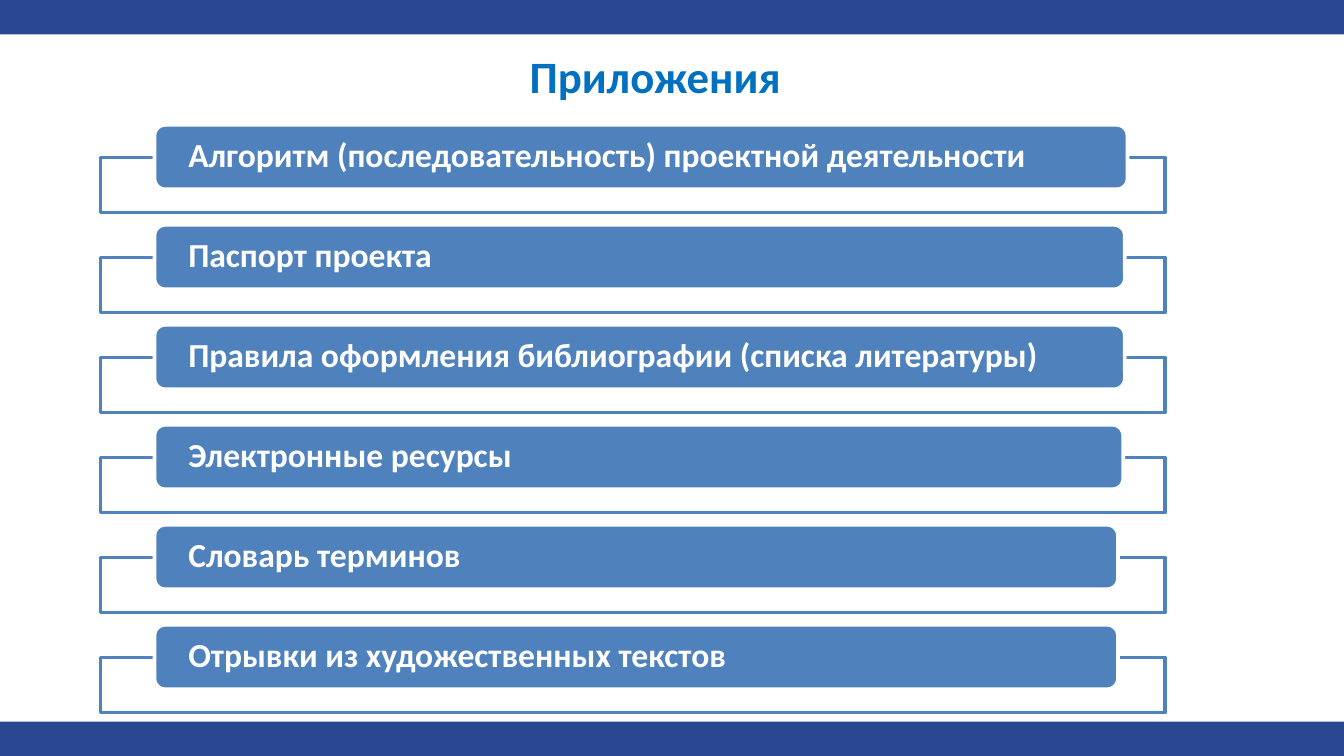
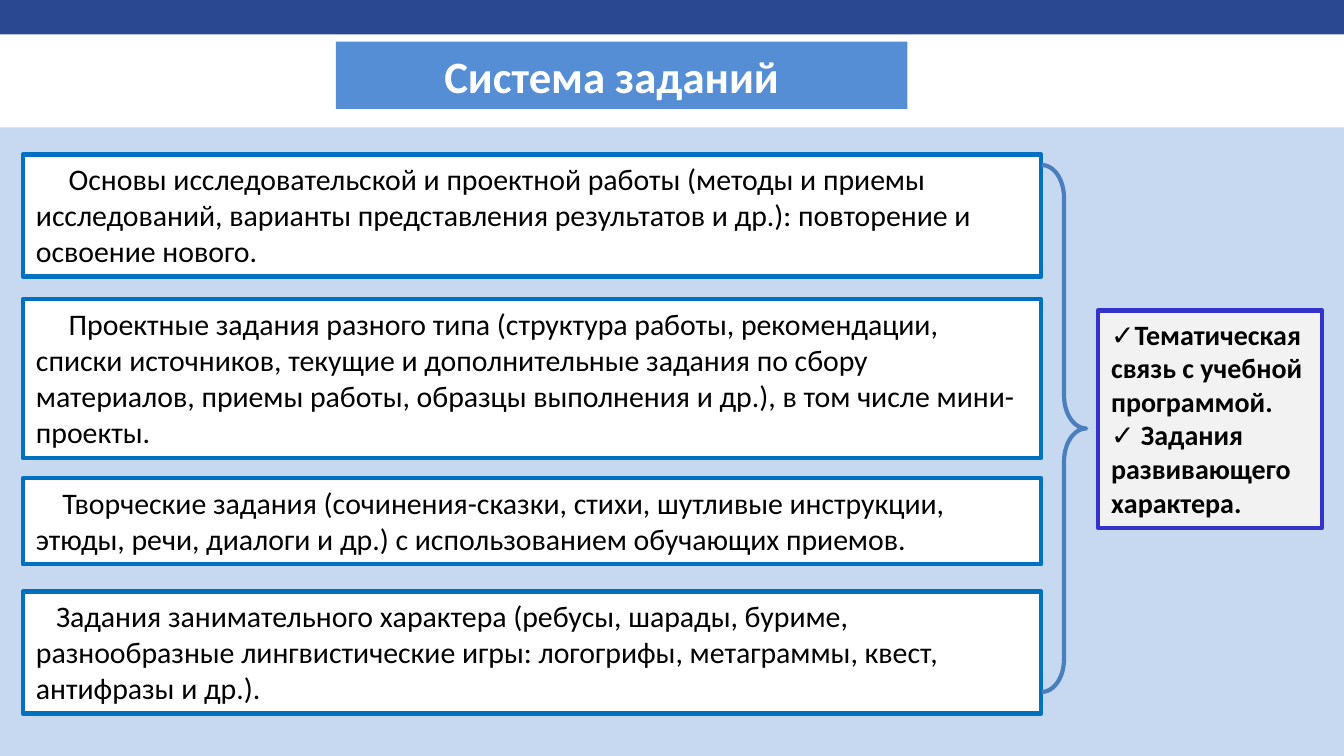
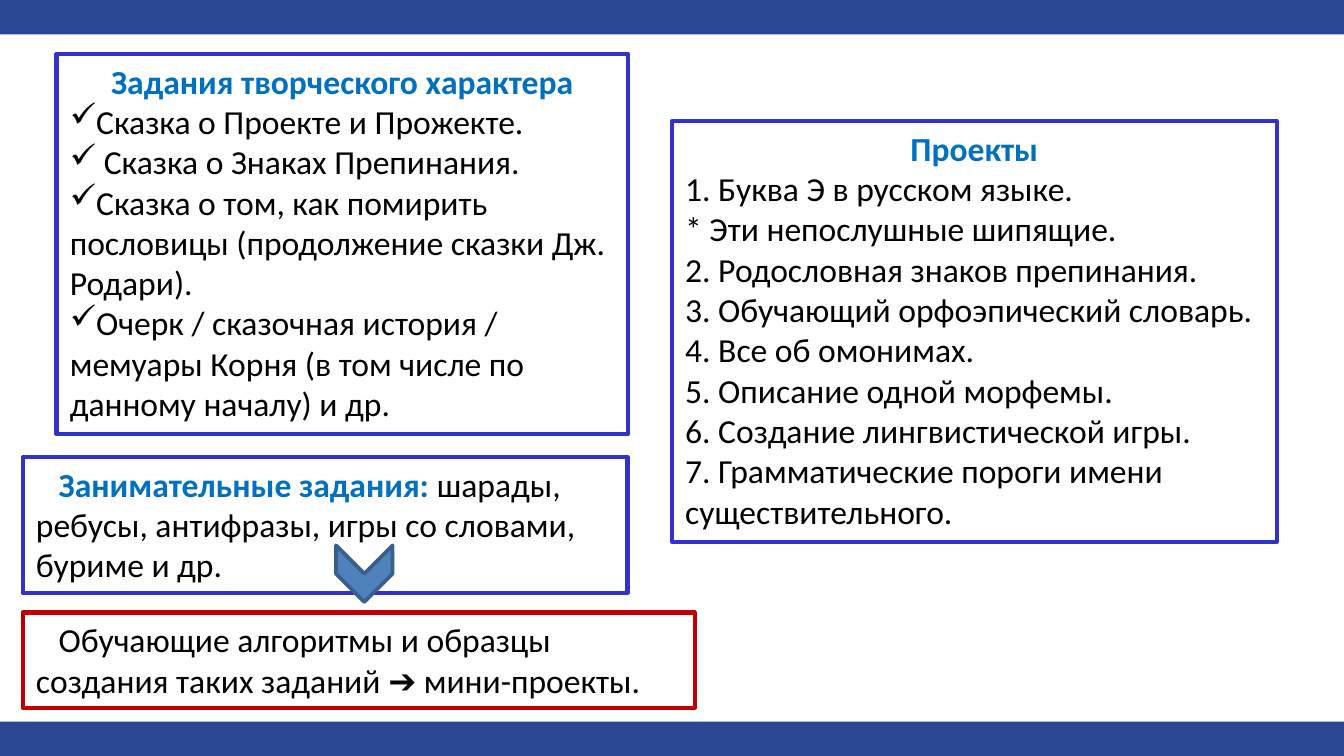
from dataclasses import dataclass, field
from typing import Any, Optional

from lxml import etree
from pptx import Presentation
from pptx import util as u
from pptx.dml.color import RGBColor
from pptx.enum import shapes, text
from pptx.oxml.ns import qn

KIND = shapes.MSO_SHAPE
ALIGN = text.PP_ALIGN
ANCHOR = text.MSO_ANCHOR


@dataclass(frozen=True)
class Theme:
    font: str = "Calibri"
    band: str = "294891"
    accent: str = "0070C0"
    bar: str = "4F81BD"
    brace: str = "4B7EBC"
    chevron_edge: str = "3A5F8C"
    banner: str = "558ED5"
    panel: str = "C6D9F1"
    note: str = "F2F2F2"
    frame: str = "3333CC"
    result: str = "C00000"
    ink: str = "000000"
    white: str = "FFFFFF"
    title: float = 24
    body: float = 18
    card: float = 16
    side: float = 15
    thin: float = 2
    thick: float = 2.25


T = Theme()


@dataclass(frozen=True)
class Area:
    left: float
    top: float
    width: float
    height: float

    def cm(self) -> list[u.Cm]:
        return [u.Cm(v) for v in (self.left, self.top, self.width, self.height)]


@dataclass(frozen=True)
class Span:
    words: str
    color: str = T.ink
    bold: bool = False


@dataclass(frozen=True)
class Para:
    spans: tuple[Span, ...]
    align: Any = ALIGN.LEFT
    indent: float = 0
    bullet: str = ""
    spacing: Optional[float] = None


@dataclass(frozen=True)
class Box:
    area: Area
    fill: Optional[str] = None
    line: Optional[str] = None
    weight: float = T.thick
    kind: Any = KIND.RECTANGLE
    paras: tuple[Para, ...] = ()
    size: float = T.body
    frame: dict[str, Any] = field(default_factory=dict)


@dataclass(frozen=True)
class Bar:
    words: str
    width: float


@dataclass(frozen=True)
class Card:
    top: float
    height: float
    indent: float
    words: str


BARS = (
    Bar("Алгоритм (последовательность) проектной деятельности", 18.39),
    Bar("Паспорт проекта", 18.34),
    Bar("Правила оформления библиографии (списка литературы)", 18.34),
    Bar("Электронные ресурсы", 18.31),
    Bar("Словарь терминов", 18.21),
    Bar("Отрывки из художественных текстов", 18.21),
)
BAR_PITCH = 1.89

CARDS = (
    Card(2.92, 2.31, 0.62,
         "Основы исследовательской и проектной работы (методы и приемы исследований, "
         "варианты представления результатов и др.): повторение и освоение нового."),
    Card(5.66, 3.0, 0.62,
         "Проектные задания разного типа (структура работы, рекомендации, списки "
         "источников, текущие и дополнительные задания по сбору материалов, приемы "
         "работы, образцы выполнения и др.), в том числе мини-проекты."),
    Card(9.04, 1.63, 0.5,
         "Творческие задания (сочинения-сказки, стихи, шутливые инструкции, этюды, "
         "речи, диалоги и др.) с использованием обучающих приемов."),
    Card(11.18, 2.31, 0.38,
         "Задания занимательного характера (ребусы, шарады, буриме, разнообразные "
         "лингвистические игры: логогрифы, метаграммы, квест, антифразы и др.)."),
)

NOTES = (
    "✓Тематическая связь с учебной программой.",
    "✓ Задания развивающего характера.",
)

PROJECTS = (
    "1. Буква Э в русском языке.",
    "* Эти непослушные шипящие.",
    "2. Родословная знаков препинания.",
    "3. Обучающий орфоэпический словарь.",
    "4. Все об омонимах.",
    "5. Описание одной морфемы.",
    "6. Создание лингвистической игры.",
    "7. Грамматические пороги имени",
    "существительного.",
)

STORIES = (
    "Сказка о Проекте и Прожекте.",
    " Сказка о Знаках Препинания.",
    "Сказка о том, как помирить пословицы (продолжение сказки Дж. Родари).",
    "Очерк / сказочная история / мемуары Корня (в том числе по данному началу) и др.",
)


def assign(target: Any, values: dict[str, Any]) -> None:
    for name, value in values.items():
        setattr(target, name, value)


def write(sp: Any, box: Box) -> None:
    tf = sp.text_frame
    assign(tf, {
        "word_wrap": True,
        "vertical_anchor": ANCHOR.TOP,
        "auto_size": text.MSO_AUTO_SIZE.SHAPE_TO_FIT_TEXT,
        **box.frame,
    })
    for i, para in enumerate(box.paras):
        p = tf.add_paragraph() if i else tf.paragraphs[0]
        assign(p, {"alignment": para.align, "line_spacing": para.spacing})
        pPr = p._p.get_or_add_pPr()
        pPr.set("marL", "0")
        pPr.set("indent", str(int(u.Cm(para.indent))))
        if para.bullet:
            etree.SubElement(pPr, qn("a:buChar")).set("char", para.bullet)
        for span in para.spans:
            r = p.add_run()
            r.text = span.words
            assign(r.font, {"name": T.font, "size": u.Pt(box.size), "bold": span.bold})
            r.font.color.rgb = RGBColor.from_string(span.color)


def draw(s: Any, box: Box) -> Any:
    sp = s.shapes.add_shape(box.kind, *box.area.cm())
    sp.shadow.inherit = False
    if box.fill:
        sp.fill.solid()
        sp.fill.fore_color.rgb = RGBColor.from_string(box.fill)
    else:
        sp.fill.background()
    if box.line:
        sp.line.color.rgb = RGBColor.from_string(box.line)
        sp.line.width = u.Pt(box.weight)
    else:
        sp.line.fill.background()
    if box.paras:
        write(sp, box)
    return sp


def title_box(words: str, area: Area, color: str, nudge: float,
              fill: Optional[str] = None) -> Box:
    para = Para((Span(words, color, True),), ALIGN.CENTER)
    return Box(area, fill, paras=(para,), size=T.title,
               frame={"margin_right": u.Cm(0.25 + nudge)})


def heading(words: str) -> Para:
    return Para((Span(words, T.accent, True),), ALIGN.CENTER)


def plain(words: str, bullet: str = "") -> Para:
    return Para((Span(words),), bullet=bullet)


def add_master_bands(prs: Any, s: Any) -> None:
    tree = prs.slide_master.shapes.element
    for i, top in enumerate((0, 13.64)):
        sp = draw(s, Box(Area(0, top, 25.4, 0.65), T.band))
        sp.element.nvSpPr.cNvPr.set("id", str(100 + i))
        sp.name = f"Band {i + 1}"
        tree.insert(2 + i, sp.element)


def appendix_slide(s: Any) -> None:
    title = title_box("Приложения", Area(7.82, 0.79, 9.32, 1.27), T.accent, 0.19)
    write(s.shapes.add_textbox(*title.area.cm()), title)
    frame = {
        "vertical_anchor": ANCHOR.MIDDLE,
        "auto_size": text.MSO_AUTO_SIZE.NONE,
        "margin_left": u.Cm(0.58),
        "margin_right": u.Cm(0.58),
        "margin_top": 0,
        "margin_bottom": 0,
    }
    for i, bar in enumerate(BARS):
        shift = i * BAR_PITCH
        draw(s, Box(Area(1.9, 2.98 + shift, 20.12, 1.04), T.white, T.bar, T.thin))
        para = Para((Span(bar.words, T.white, True),), spacing=0.9)
        draw(s, Box(Area(2.92, 2.36 + shift, bar.width, 1.22), T.bar, T.white, T.thin,
                    KIND.ROUNDED_RECTANGLE, (para,), frame=frame))


def tasks_slide(s: Any) -> None:
    draw(s, title_box("Система заданий", Area(6.35, 0.79, 10.8, 1.27), T.white, 0.38,
                      T.banner))
    draw(s, Box(Area(0, 2.41, 25.4, 11.88), T.panel))
    for card in CARDS:
        para = Para((Span(card.words),), indent=card.indent)
        draw(s, Box(Area(0.43, card.top, 19.25, card.height), T.white, T.accent,
                    paras=(para,), size=T.card))
    brace = draw(s, Box(Area(19.69, 3.12, 0.84, 9.96), line=T.brace,
                        kind=KIND.RIGHT_BRACE))
    brace.adjustments[0] = 0.74
    brace.adjustments[1] = 0.5
    notes = tuple(Para((Span(words, bold=True),)) for words in NOTES)
    draw(s, Box(Area(20.75, 5.87, 4.24, 4.11), T.note, T.frame, paras=notes, size=T.side))


def examples_slide(s: Any) -> None:
    projects = (heading("Проекты"), *map(plain, PROJECTS))
    stories = (heading("Задания творческого характера"),
               *(plain(words, "✓") for words in STORIES))
    puzzles = Para((
        Span("Занимательные задания: ", T.accent, True),
        Span("шарады, ребусы, антифразы, игры со словами, буриме и др."),
    ), indent=0.43)
    result = Para((
        Span("Обучающие алгоритмы и образцы создания таких заданий ➔ мини-проекты."),
    ), indent=0.43)
    for box in (
        Box(Area(12.7, 2.29, 11.43, 7.95), line=T.frame, paras=projects),
        Box(Area(1.07, 1.02, 10.8, 7.19), line=T.frame, paras=stories),
        Box(Area(0.43, 8.64, 11.43, 2.57), line=T.frame, paras=(puzzles,)),
        Box(Area(0.43, 11.58, 12.7, 1.8), line=T.result, paras=(result,)),
    ):
        draw(s, box)
    chevron = draw(s, Box(Area(6.35, 10.31, 1.07, 1.07), T.bar, T.chevron_edge, T.thin,
                          KIND.CHEVRON))
    chevron.rotation = 90


def main() -> None:
    prs = Presentation()
    assign(prs, {"slide_width": u.Cm(25.4), "slide_height": u.Cm(14.29)})
    for i, build in enumerate((appendix_slide, tasks_slide, examples_slide)):
        s = prs.slides.add_slide(prs.slide_layouts[6])
        if i == 0:
            add_master_bands(prs, s)
        build(s)
    prs.save("out.pptx")


if __name__ == "__main__":
    main()
